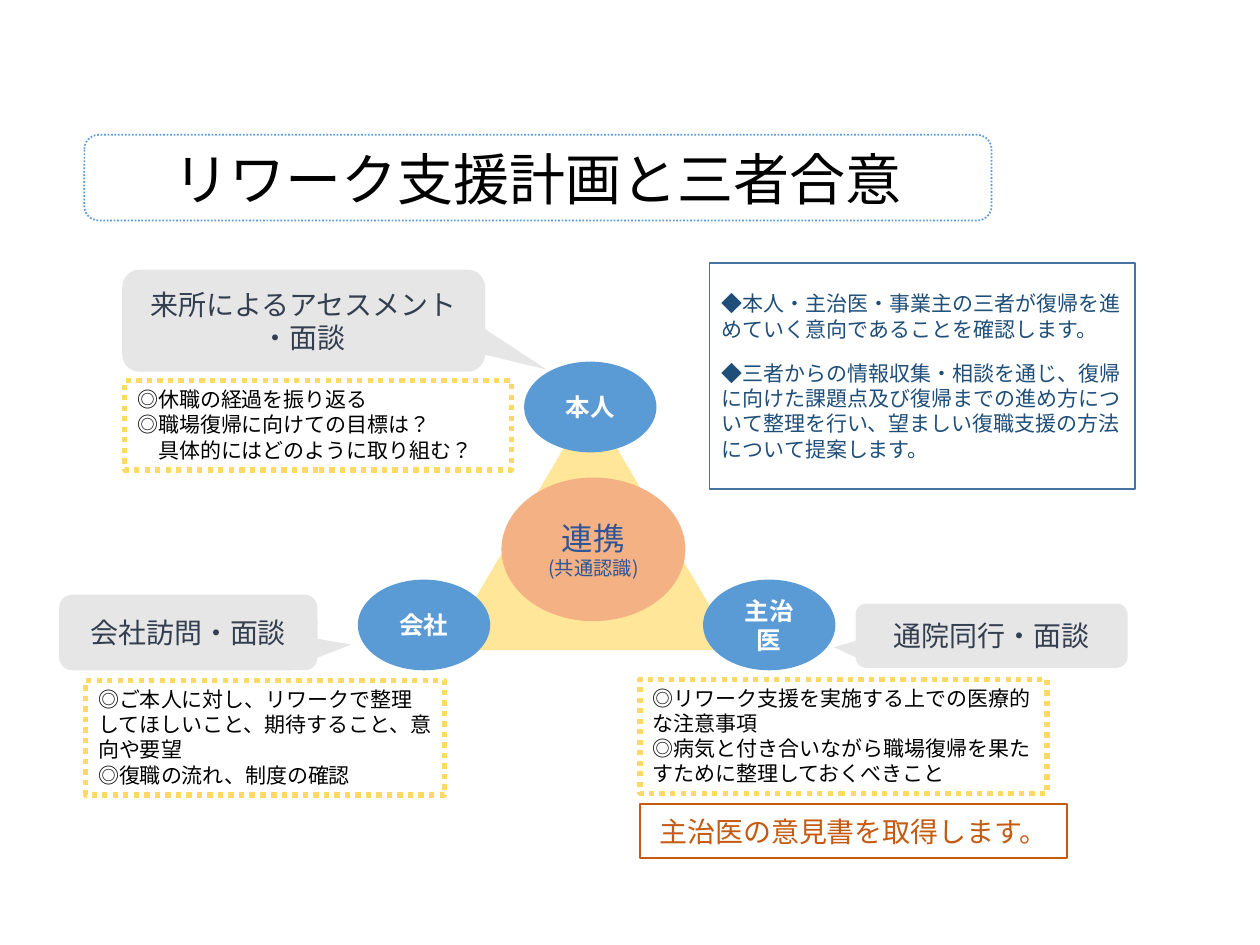
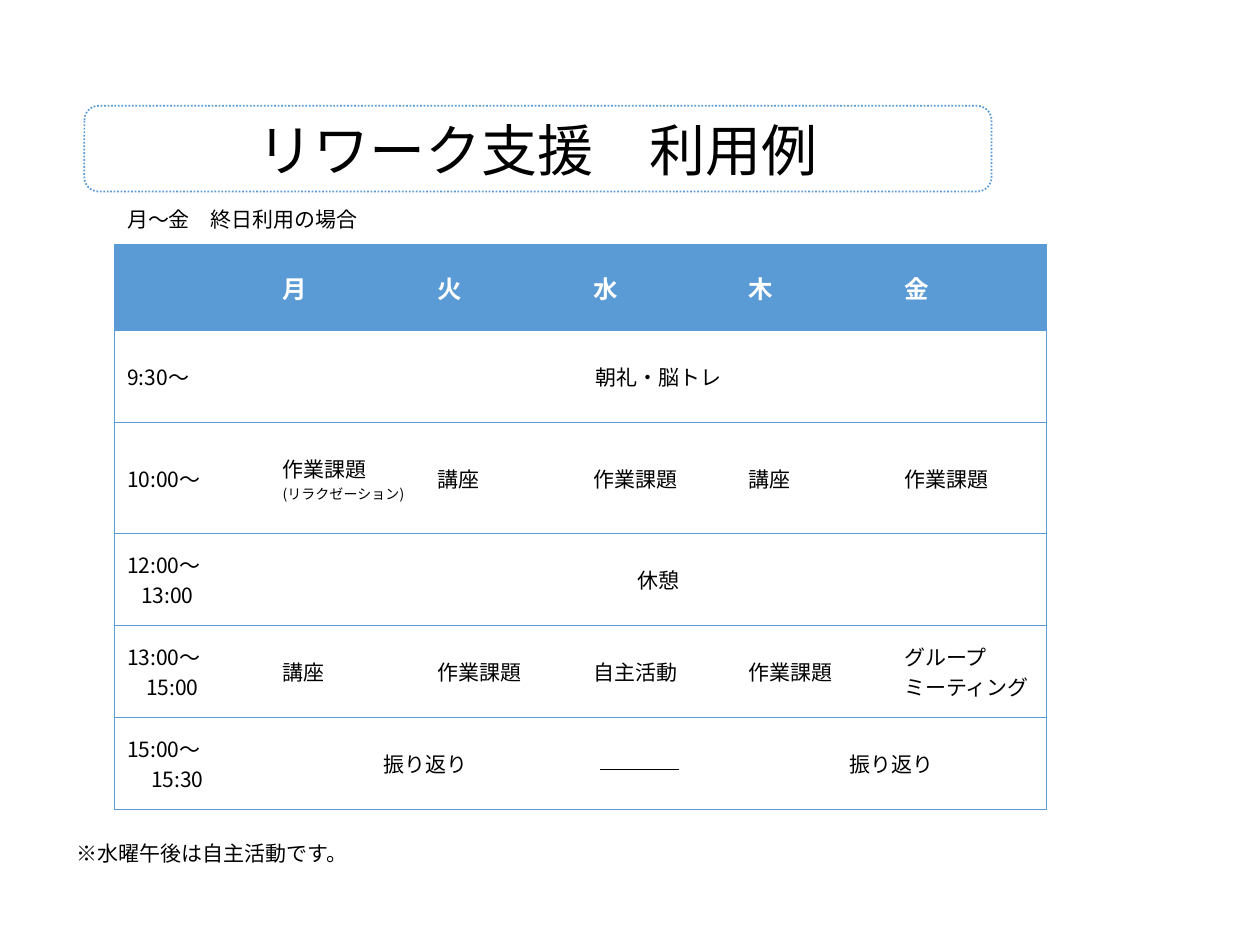
from lxml.etree import SubElement
from pptx import Presentation
from pptx.dml.color import RGBColor
from pptx.enum.dml import MSO_LINE as DASH
from pptx.enum.lang import MSO_LANGUAGE_ID as LANGUAGE
from pptx.enum.shapes import MSO_CONNECTOR, MSO_SHAPE as SHAPE
from pptx.enum.text import MSO_ANCHOR as ANCHOR, MSO_AUTO_SIZE as FIT, PP_ALIGN as ALIGN
from pptx.oxml.ns import qn
from pptx.util import Inches, Pt

rgb = RGBColor.from_string
FONT = "Noto Sans CJK JP"
BLACK, WHITE, BLUE = "000000", "FFFFFF", "5B9BD5"
GREY, SLATE, YELLOW, ORANGE = "E7E6E6", "333F50", "FFD966", "C55A11"
CENTER, LEFT = ALIGN.CENTER, ALIGN.LEFT

deck = Presentation()
deck.slide_width, deck.slide_height = Inches(10), Inches(7.5)
UNIT = deck.slide_width / 100  # the slide is a grid of 100 columns and 75 rows


def write(frame, lines, size, color, align=LEFT, bold=False, gap=0):
    """Fill a text frame; a line is a string or a (string, size) pair."""
    for index, line in enumerate(lines):
        text, points = (line, size) if isinstance(line, str) else line
        para = frame.add_paragraph() if index else frame.paragraphs[0]
        para_format = {"alignment": align, "line_spacing": 1.0,
                       "space_before": Pt(gap if index else 0)}
        for name, value in para_format.items():
            setattr(para, name, value)
        span = para.add_run()
        span.text = text
        font_format = {"name": FONT, "size": Pt(points), "bold": bold,
                       "language_id": LANGUAGE.JAPANESE}
        for name, value in font_format.items():
            setattr(span.font, name, value)
        span.font.color.rgb = rgb(color)
        SubElement(span.font._element, qn("a:ea"), typeface=FONT)


def add_box(page, kind, place, fill=None, line=None, adjust=(), anchor=ANCHOR.MIDDLE):
    """Place a preset shape; line is (colour, points, dash)."""
    box = page.shapes.add_shape(kind, *[int(n * UNIT) for n in place])
    box.shadow.inherit = False
    for index, value in enumerate(adjust):
        box.adjustments[index] = value
    if fill:
        box.fill.solid()
        box.fill.fore_color.rgb = rgb(fill)
    else:
        box.fill.background()
    if line:
        color, points, dash = line
        box.line.color.rgb = rgb(color)
        box.line.width = Pt(points)
        box.line.dash_style = dash
    else:
        box.line.fill.background()
    box.text_frame.word_wrap = True
    box.text_frame.vertical_anchor = anchor
    return box


# Titles shared by both slides
pages = []
for heading, top in (("リワーク支援計画と三者合意", 10.7), ("リワーク支援　利用例", 8.4)):
    page = deck.slides.add_slide(deck.slide_layouts[5])
    place = (6.7, top, 72, 6.8)
    frame_box = add_box(page, SHAPE.ROUNDED_RECTANGLE, place, WHITE, (BLUE, 1, DASH.ROUND_DOT))
    title = page.shapes.title
    frame_box._element.addnext(title._element)  # the title lies in front of its frame
    for name, value in zip(("left", "top", "width", "height"), place):
        setattr(title, name, int(value * UNIT))
    title.text_frame.auto_size = FIT.NONE
    title.text_frame.vertical_anchor = ANCHOR.MIDDLE
    write(title.text_frame, [heading], 32, BLACK, CENTER)
    pages.append(page)
plan, timetable = pages

# Slide 1: triangle of the three parties
add_box(plan, SHAPE.ISOSCELES_TRIANGLE, (35.3, 32, 23.1, 19.6), "FFE699")
hub = add_box(plan, SHAPE.OVAL, (39.8, 37.9, 14.6, 11.4), "F4B183")
write(hub.text_frame, ["連携", ("(共通認識)", 11)], 18, "2F5597", CENTER)

notes = [
    ((9.9, 30.2, 30.7, 7.1), ["◎休職の経過を振り返る", "◎職場復帰に向けての目標は？",
                              "　具体的にはどのように取り組む？"]),
    ((50.8, 53.9, 32.3, 9.1), ["◎リワーク支援を実施する上での医療的な注意事項",
                               "◎病気と付き合いながら職場復帰を果たすために整理しておくべきこと"]),
    ((6.8, 54, 28.5, 9.1), ["◎ご本人に対し、リワークで整理してほしいこと、期待すること、意向や要望",
                            "◎復職の流れ、制度の確認"]),
]
for place, lines in notes:
    note = add_box(plan, SHAPE.RECTANGLE, place, None, (YELLOW, 3, DASH.ROUND_DOT),
                   anchor=ANCHOR.TOP)
    write(note.text_frame, lines, 12, BLACK)

callouts = [
    ((4.7, 47.2, 20.5, 6), (0.63, 0.16, 0.17), ["会社訪問・面談"]),
    ((67.9, 47.9, 21.6, 5.1), (-0.58, 0.18, 0.17), ["通院同行・面談"]),
    ((9.7, 21.4, 28.8, 8.1), (0.67, 0.48, 0.17), ["来所によるアセスメント", "・面談"]),
]
for place, adjust, lines in callouts:
    callout = add_box(plan, SHAPE.ROUNDED_RECTANGULAR_CALLOUT, place, GREY, adjust=adjust)
    write(callout.text_frame, lines, 16, SLATE, CENTER)

for party, left, top in (("会社", 28.4, 46), ("本人", 41.6, 28.7), ("主治医", 55.8, 46)):
    oval = add_box(plan, SHAPE.OVAL, (left, top, 10.5, 7.2), BLUE)
    write(oval.text_frame, [party], 14, WHITE, CENTER, bold=True)

opinion = add_box(plan, SHAPE.RECTANGLE, (50.8, 63.8, 33.9, 4.3), None, (ORANGE, 1, DASH.SOLID))
write(opinion.text_frame, ["主治医の意見書を取得します。"], 16, ORANGE, CENTER)

agreement = add_box(plan, SHAPE.RECTANGULAR_CALLOUT, (56.3, 20.9, 33.8, 17.9), WHITE,
                    ("43739E", 1, DASH.SOLID), (-0.38, -0.5))
write(agreement.text_frame, [
    "◆本人・主治医・事業主の三者が復帰を進めていく意向であることを確認します。",
    "◆三者からの情報収集・相談を通じ、復帰に向けた課題点及び復帰までの進め方について整理を行い、"
    "望ましい復職支援の方法について提案します。"], 12, "1F4E79", gap=11)

# Slide 2: weekly timetable; a cell is a list of lines
WORK, LECTURE, REVIEW = ["作業課題"], ["講座"], ["振り返り"]
schedule = [
    [[], ["月"], ["火"], ["水"], ["木"], ["金"]],
    [["9:30～"], ["朝礼・脳トレ"], [], [], [], []],
    [["10:00～"], WORK + [("(リラクゼーション)", 8)], LECTURE, WORK, LECTURE, WORK],
    [["12:00～", "13:00"], ["休憩"], [], [], [], []],
    [["13:00～", "15:00"], LECTURE, WORK, ["自主活動"], WORK, ["グループ", "ミーティング"]],
    [["15:00～", "15:30"], REVIEW, [], [], REVIEW, []],
]
row_heights = [6.85, 7.3, 8.8, 7.3, 7.3, 7.3]
merges = {(1, 1): 5, (3, 1): 5, (5, 1): 2, (5, 4): 2}
end_time_indents = {3: 0.11, 4: 0.15, 5: 0.19}

table = timetable.shapes.add_table(
    6, 6, *[int(n * UNIT) for n in (9.1, 19.4, 74, sum(row_heights))]).table
table.horz_banding = False
for row, height in zip(table.rows, row_heights):
    row.height = int(height * UNIT)

for r, row in enumerate(schedule):
    for c, lines in enumerate(row):
        cell = table.cell(r, c)
        cell.vertical_anchor = ANCHOR.MIDDLE
        span_columns = merges.get((r, c), 1)
        sides = {"lnL": c == 0, "lnR": c + span_columns == 6, "lnT": True, "lnB": True}
        for side, visible in sides.items():
            border = SubElement(cell._tc.get_or_add_tcPr(), qn("a:" + side), w=str(Pt(0.5)))
            paint = SubElement(border, qn("a:solidFill" if visible else "a:noFill"))
            if visible:
                SubElement(paint, qn("a:srgbClr"), val=BLUE)
        cell.fill.solid()
        cell.fill.fore_color.rgb = rgb(WHITE if r else BLUE)
        if span_columns > 1:
            cell.merge(table.cell(r, c + span_columns - 1))
        write(cell.text_frame, lines, 12 if r else 14, BLACK if r else WHITE,
              CENTER if span_columns > 1 else LEFT, bold=r == 0)

for r, indent in end_time_indents.items():
    end_time = table.cell(r, 0).text_frame.paragraphs[1]
    end_time._p.get_or_add_pPr().set("marL", str(Inches(indent)))

no_review = timetable.shapes.add_connector(
    MSO_CONNECTOR.STRAIGHT, *[int(n * UNIT) for n in (53.9, 61.1, 47.6, 61.1)])
no_review.line.color.rgb = rgb(BLACK)
no_review.line.width = Pt(0.5)
SubElement(no_review._element.spPr, qn("a:effectLst"))

captions = [("月～金　終日利用の場合", (9.1, 15.9, 20.5, 3)),
            ("※水曜午後は自主活動です。", (5.1, 66.2, 23.9, 3))]
for text, place in captions:
    caption = timetable.shapes.add_textbox(*[int(n * UNIT) for n in place])
    caption.text_frame.word_wrap = False
    write(caption.text_frame, [text], 12, BLACK)

deck.save("out.pptx")
